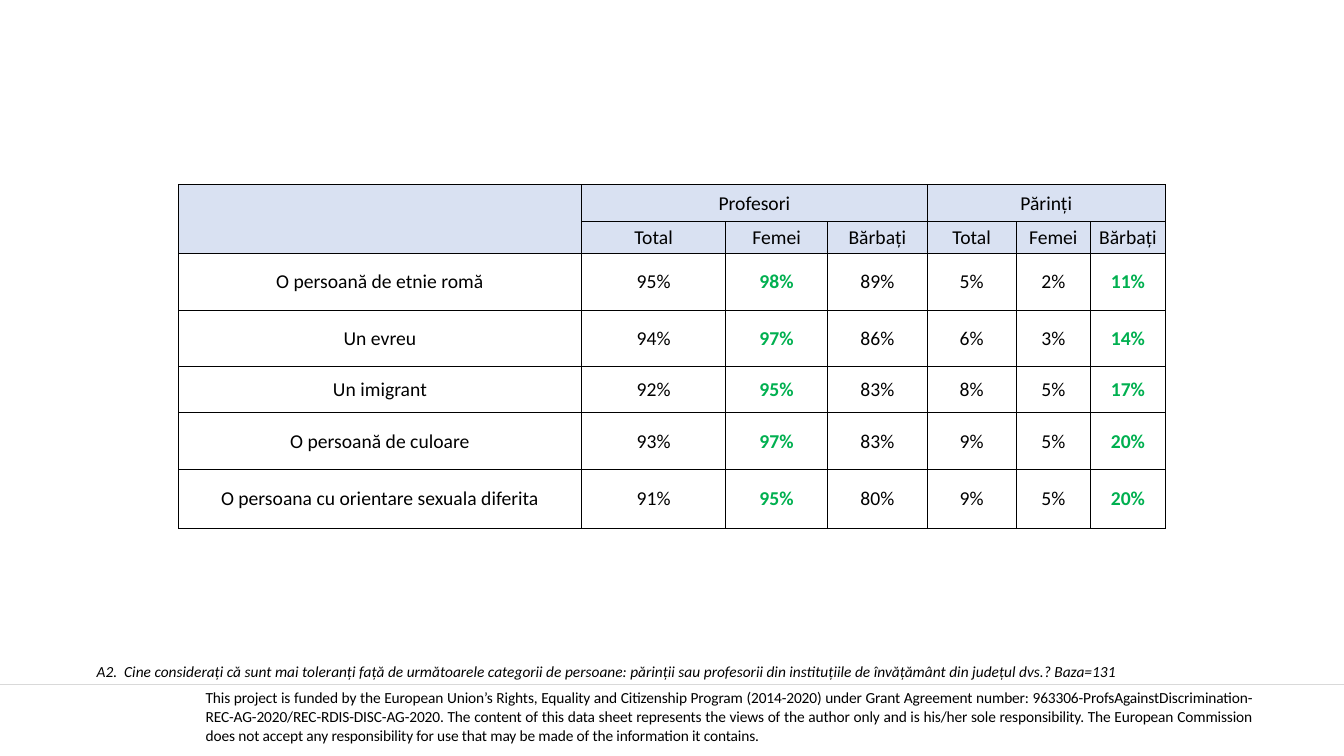
from dataclasses import dataclass

from lxml import etree
from pptx import Presentation
from pptx.dml.color import RGBColor
from pptx.enum import shapes, text
from pptx.oxml import ns
from pptx.util import Pt

FONT = "Calibri"
BLACK, GREEN, HEADER_BLUE, RULE_GREY = "000000", "00B050", "D9E1F2", "D9D9D9"
NO_STYLE = "{2D5ABB26-0587-4C30-8999-92F81FD0307C}"
COLUMN_WIDTHS = [288, 103, 72.7, 71.3, 63.4, 53.3, 53.3]
ROW_HEIGHTS = [26.6, 21.6, 40.3, 40.3, 33.1, 40.3, 42.5]
HIGHLIGHTED_COLUMNS = {2, 6}  # the more tolerant-leaning gender in each group
HEADER_ROWS = 2

QUESTION = (
    "A2.  Cine considerați că sunt mai toleranți față de următoarele categorii de persoane: "
    "părinții sau profesorii din instituțiile de învățământ din județul dvs.? Baza=131"
)
FUNDING = (
    "This project is funded by the European Union’s Rights, Equality and Citizenship Program "
    "(2014-2020) under Grant Agreement number: "
    "963306-ProfsAgainstDiscrimination-REC-AG-2020/REC-RDIS-DISC-AG-2020. "
    "The content of this data sheet represents the views of the author only and is his/her sole "
    "responsibility. The European Commission does not accept any responsibility for use that may "
    "be made of the information it contains."
)


@dataclass
class Category:
    label: str
    teachers: tuple[int, int, int]
    parents: tuple[int, int, int]

    def cells(self) -> list[str]:
        return [self.label, *(f"{share}%" for share in self.teachers + self.parents)]


CATEGORIES = [
    Category("O persoană de etnie romă", (95, 98, 89), (5, 2, 11)),
    Category("Un evreu", (94, 97, 86), (6, 3, 14)),
    Category("Un imigrant", (92, 95, 83), (8, 5, 17)),
    Category("O persoană de culoare", (93, 97, 83), (9, 5, 20)),
    Category("O persoana cu orientare sexuala diferita", (91, 95, 80), (9, 5, 20)),
]


def rgb(value: str) -> RGBColor:
    return RGBColor.from_string(value)


def format_text(paragraph, size: float, color: str = BLACK, bold=False, italic=False) -> None:
    for run in paragraph.runs:
        font = run.font
        font.name, font.size, font.bold, font.italic = FONT, Pt(size), bold, italic
        font.color.rgb = rgb(color)


def add_plain_table(slide, left: float, top: float, widths: list[float], heights: list[float]):
    """Add a table without any built-in style."""
    frame = slide.shapes.add_table(
        len(heights), len(widths), Pt(left), Pt(top), Pt(sum(widths)), Pt(sum(heights))
    )
    table = frame.table
    table.first_row = table.horz_banding = False
    frame._element.find(f".//{ns.qn('a:tableStyleId')}").text = NO_STYLE
    for column, width in zip(table.columns, widths):
        column.width = Pt(width)
    for row, height in zip(table.rows, heights):
        row.height = Pt(height)
    return table


def set_margins(cell, side: float, top: float) -> None:
    cell.margin_left = cell.margin_right = Pt(side)
    cell.margin_top, cell.margin_bottom = Pt(top), Pt(0)
    cell.vertical_anchor = text.MSO_ANCHOR.MIDDLE


def add_borders(cell) -> None:
    """Draw thin black lines on all four sides; call before setting the fill."""
    properties = cell._tc.get_or_add_tcPr()
    for side in ("lnL", "lnR", "lnT", "lnB"):
        line = etree.SubElement(properties, ns.qn(f"a:{side}"), w=str(Pt(0.5)))
        fill = etree.SubElement(line, ns.qn("a:solidFill"))
        etree.SubElement(fill, ns.qn("a:srgbClr"), val=BLACK)


def add_tolerance_table(slide) -> None:
    table = add_plain_table(slide, 127.4, 131.8, COLUMN_WIDTHS, ROW_HEIGHTS)
    genders = ["Total", "Femei", "Bărbați"]
    rows = [
        ["", "Profesori", "", "", "Părinți", "", ""],
        ["", *genders, *genders],
        *(category.cells() for category in CATEGORIES),
    ]
    for row, contents in enumerate(rows):
        is_header = row < HEADER_ROWS
        for column, content in enumerate(contents):
            cell = table.cell(row, column)
            set_margins(cell, 0.7, 0.7)
            add_borders(cell)
            if is_header:
                cell.fill.solid()
                cell.fill.fore_color.rgb = rgb(HEADER_BLUE)
            else:
                cell.fill.background()
            cell.text_frame.text = content
            paragraph = cell.text_frame.paragraphs[0]
            paragraph.alignment = text.PP_ALIGN.CENTER
            highlighted = not is_header and column in HIGHLIGHTED_COLUMNS
            format_text(paragraph, 14, GREEN if highlighted else BLACK, bold=highlighted)

    table.cell(0, 0).merge(table.cell(1, 0))
    for first in (1, 4):
        table.cell(0, first).merge(table.cell(0, first + 2))


def add_funding_note(slide) -> None:
    cell = add_plain_table(slide, 146.9, 474.5, [748], [74.9]).cell(0, 0)
    set_margins(cell, 0, 0)
    cell.fill.background()
    cell.text_frame.text = FUNDING
    paragraph = cell.text_frame.paragraphs[0]
    paragraph.alignment = text.PP_ALIGN.JUSTIFY
    format_text(paragraph, 11)
    paragraph.runs[0].font._element.set("spc", "-10")


def add_footer_rule(slide) -> None:
    rule = slide.shapes.add_connector(
        shapes.MSO_CONNECTOR.STRAIGHT, Pt(0), Pt(488.9), Pt(960), Pt(488.9)
    )
    rule.line.color.rgb = rgb(RULE_GREY)
    rule.line.width = Pt(0.5)
    etree.SubElement(rule._element.spPr, ns.qn("a:effectLst"))


def add_question(slide) -> None:
    question = slide.shapes.add_textbox(Pt(61.9), Pt(469.4), Pt(761.8), Pt(20.6)).text_frame
    question.word_wrap = True
    question.auto_size = text.MSO_AUTO_SIZE.SHAPE_TO_FIT_TEXT
    question.text = QUESTION
    format_text(question.paragraphs[0], 11, italic=True)


def main() -> None:
    presentation = Presentation()
    presentation.slide_width, presentation.slide_height = Pt(960), Pt(540)
    slide = presentation.slides.add_slide(presentation.slide_layouts[6])
    add_funding_note(slide)
    add_tolerance_table(slide)
    add_footer_rule(slide)
    add_question(slide)
    presentation.save("out.pptx")


if __name__ == "__main__":
    main()
